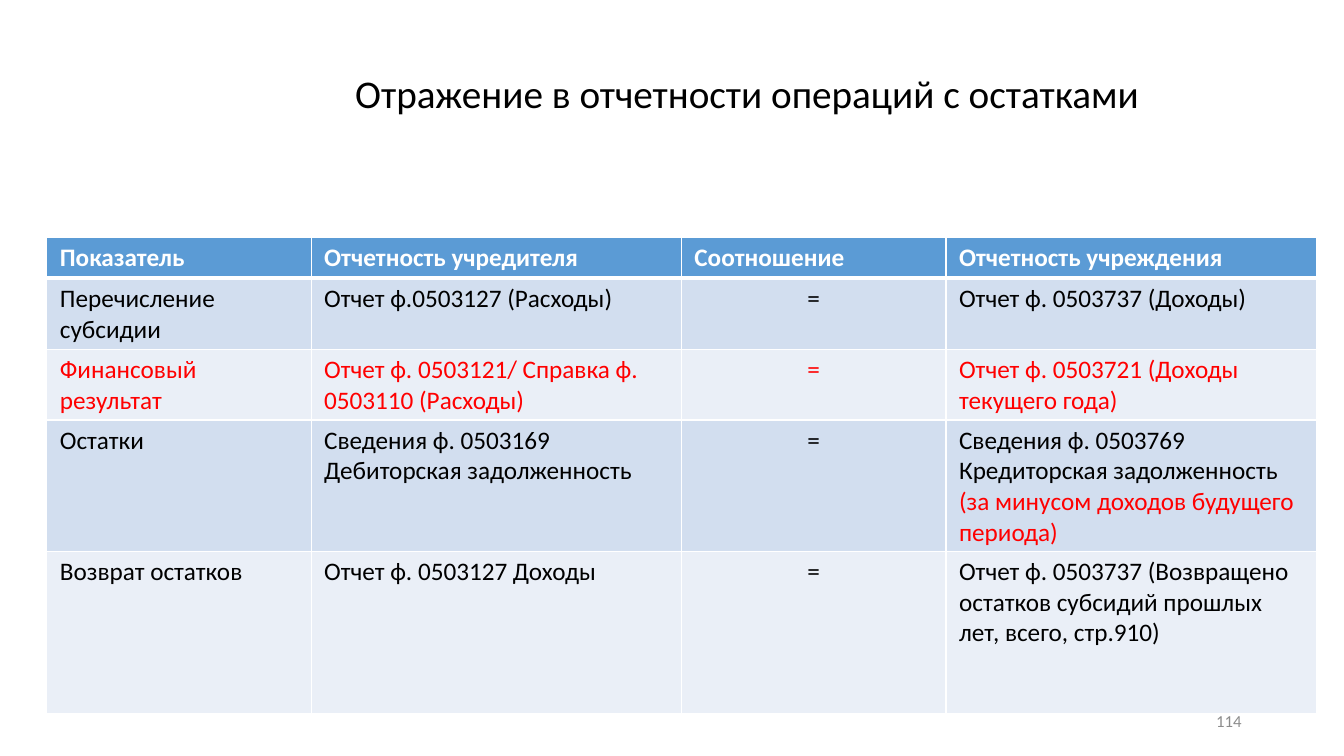
from lxml import etree
from pptx import Presentation
from pptx.dml.color import RGBColor
from pptx.enum.text import MSO_ANCHOR, PP_ALIGN
from pptx.oxml.ns import qn
from pptx.util import Cm, Pt

BLACK, WHITE, RED, GRAY = "000000", "FFFFFF", "FF0000", "8C8C8C"
HEADER_FILL, BAND_FILLS = "5B9BD5", ("D2DEEF", "EAEFF7")
COLUMN_WIDTHS = (6.66, 9.33, 6.67, 9.34)
ROW_HEIGHTS = (0.92, 1.55, 1.55, 2.9, 4.1)

HEADERS = ("Показатель", "Отчетность учредителя", "Соотношение", "Отчетность учреждения")
# Each row: indicator, founder's report, institution's report, text colour
ROWS = (
    ("Перечисление субсидии", "Отчет ф.0503127 (Расходы)",
     "Отчет ф. 0503737 (Доходы)", BLACK),
    ("Финансовый результат", "Отчет ф. 0503121/ Справка ф. 0503110 (Расходы)",
     "Отчет ф. 0503721 (Доходы текущего года)", RED),
    ("Остатки", "Сведения ф. 0503169 Дебиторская задолженность",
     "Сведения ф. 0503769", BLACK),
    ("Возврат остатков", "Отчет ф. 0503127 Доходы",
     "Отчет ф. 0503737 (Возвращено остатков субсидий прошлых лет, всего, стр.910)", BLACK),
)
BALANCES_ROW = 3


def rgb(value):
    return RGBColor.from_string(value)


def add_text(p, text, size=18, color=BLACK, bold=False, align=PP_ALIGN.LEFT):
    p.alignment = align
    r = p.add_run()
    r.text = text
    r.font.name = "Calibri"
    r.font.size = Pt(size)
    r.font.bold = bold
    r.font.color.rgb = rgb(color)


def add_text_box(slide, left, top, width, height, text, line_spacing=1.0, **fmt):
    sp = slide.shapes.add_textbox(Cm(left), Cm(top), Cm(width), Cm(height))
    tf = sp.text_frame
    tf.word_wrap = True
    tf.vertical_anchor = MSO_ANCHOR.MIDDLE
    p = tf.paragraphs[0]
    p.line_spacing = line_spacing
    add_text(p, text, **fmt)


def set_border(cell, side, width):
    """Draw a white border; side is L, R, T or B."""
    ln = etree.SubElement(cell._tc.get_or_add_tcPr(), qn(f"a:ln{side}"), w=str(Pt(width)))
    fill = etree.SubElement(ln, qn("a:solidFill"))
    etree.SubElement(fill, qn("a:srgbClr"), val=WHITE)


def fill_cell(cell, text, fill, top=1, bottom=1, **fmt):
    """Set text, borders and fill; top and bottom are border widths in points."""
    cell.margin_left = cell.margin_right = Cm(0.33)
    cell.margin_top = cell.margin_bottom = Cm(0.13)
    for side, width in zip("LRTB", (1, 1, top, bottom)):
        set_border(cell, side, width)
    cell.fill.solid()
    cell.fill.fore_color.rgb = rgb(fill)
    add_text(cell.text_frame.paragraphs[0], text, **fmt)


def add_report_table(slide):
    frame = slide.shapes.add_table(len(ROW_HEIGHTS), len(COLUMN_WIDTHS), Cm(1.18), Cm(5.99),
                                   Cm(sum(COLUMN_WIDTHS)), Cm(sum(ROW_HEIGHTS)))
    table = frame.table
    for column, width in zip(table.columns, COLUMN_WIDTHS):
        column.width = Cm(width)
    for row, height in zip(table.rows, ROW_HEIGHTS):
        row.height = Cm(height)

    for j, header in enumerate(HEADERS):
        fill_cell(table.cell(0, j), header, HEADER_FILL, bottom=3, color=WHITE, bold=True)
    for i, (indicator, founder, institution, color) in enumerate(ROWS, start=1):
        for j, text in enumerate((indicator, founder, "=", institution)):
            fill_cell(table.cell(i, j), text, BAND_FILLS[(i - 1) % 2],
                      top=3 if i == 1 else 1, color=color,
                      align=PP_ALIGN.CENTER if text == "=" else PP_ALIGN.LEFT)

    p = table.cell(BALANCES_ROW, 3).text_frame.add_paragraph()
    add_text(p, "Кредиторская задолженность ")
    add_text(p, "(за минусом доходов будущего периода)", color=RED)


def main():
    prs = Presentation()
    prs.slide_width, prs.slide_height = Cm(33.87), Cm(19.05)
    slide = prs.slides.add_slide(prs.slide_layouts[6])
    add_text_box(slide, 4.22, 0.58, 29.21, 3.68, "Отражение в отчетности операций с остатками",
                 line_spacing=0.9, size=28, align=PP_ALIGN.CENTER)
    add_text_box(slide, 23.92, 17.66, 7.62, 1.01, "114", size=12, color=GRAY,
                 align=PP_ALIGN.RIGHT)
    add_report_table(slide)
    prs.save("out.pptx")


if __name__ == "__main__":
    main()
